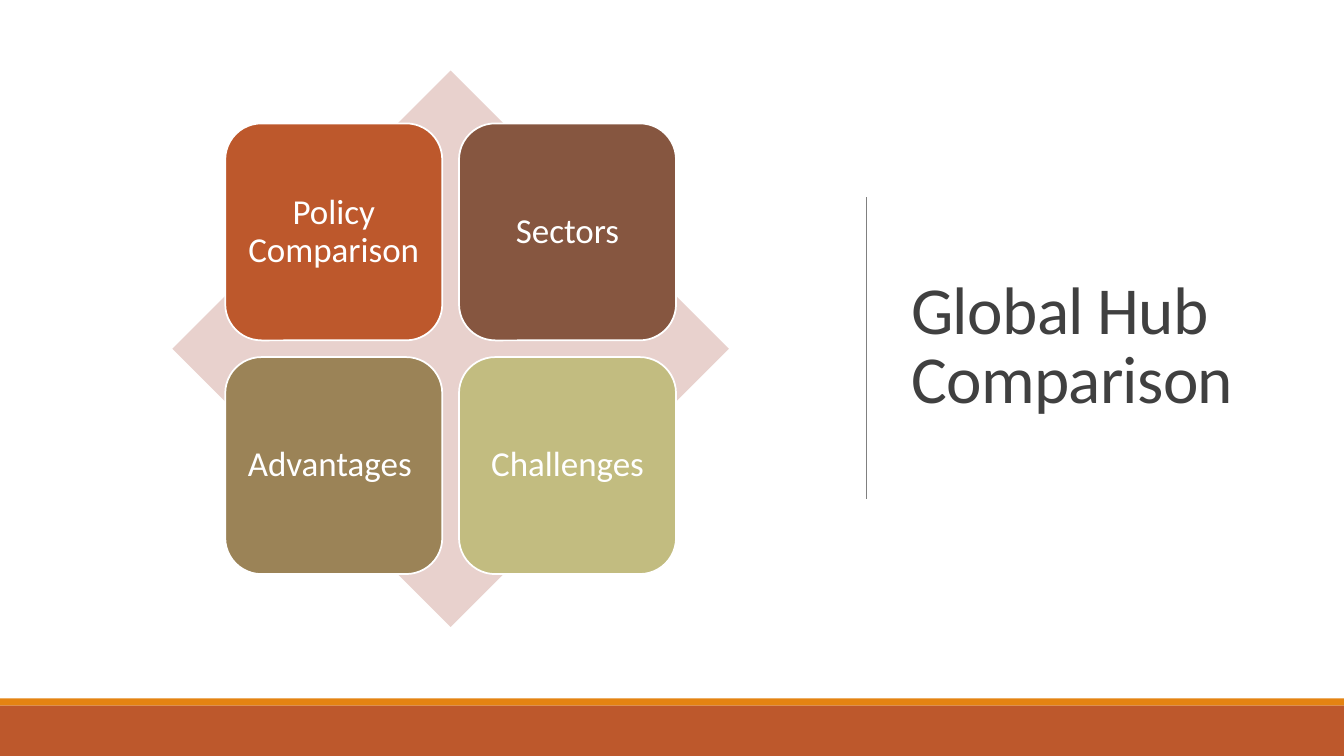
import pptx
import pptx.dml.color
import pptx.enum.shapes
import pptx.enum.text
import pptx.oxml
import pptx.oxml.ns
import pptx.util

RGBColor = pptx.dml.color.RGBColor
Inches = pptx.util.Inches
Pt = pptx.util.Pt
SHAPE = pptx.enum.shapes.MSO_SHAPE
ALIGN = pptx.enum.text.PP_ALIGN

WHITE = RGBColor(0xFF, 0xFF, 0xFF)
CHARCOAL = RGBColor(0x40, 0x40, 0x40)
GRAY = RGBColor(0x80, 0x80, 0x80)
ORANGE = RGBColor(0xE4, 0x83, 0x12)
RUST = RGBColor(0xBD, 0x58, 0x2C)
BROWN = RGBColor(0x86, 0x56, 0x40)
OLIVE = RGBColor(0x9B, 0x83, 0x57)
SAGE = RGBColor(0xC2, 0xBC, 0x80)
BLUSH = RGBColor(0xE8, 0xD1, 0xCD)

FONT = "Calibri"
WIDTH, HEIGHT = 13.33, 7.5
TOPICS = [("Policy Comparison", RUST), ("Sectors", BROWN),
          ("Advantages ", OLIVE), ("Challenges", SAGE)]


def add_block(slide, preset, box, color):
    """Add a filled preset shape without outline or shadow."""
    shape = slide.shapes.add_shape(preset, *map(Inches, box))
    shape.shadow.inherit = False
    shape.fill.solid()
    shape.fill.fore_color.rgb = color
    shape.line.fill.background()
    return shape


def write_text(shape, text, size, color, alignment, line_spacing):
    """Fill a shape with one wrapped, vertically centred paragraph."""
    frame = shape.text_frame
    frame.word_wrap = True
    frame.vertical_anchor = pptx.enum.text.MSO_ANCHOR.MIDDLE
    frame.margin_left = frame.margin_right = Inches(0.1)
    paragraph = frame.paragraphs[0]
    paragraph.alignment = alignment
    paragraph.line_spacing = line_spacing
    run = paragraph.add_run()
    run.text = text
    run.font.name = FONT
    run.font.size = Pt(size)
    run.font.color.rgb = color
    return run


def add_matrix(slide, left, top, side):
    """Place a diamond with a two-by-two grid of topic tiles over it."""
    add_block(slide, SHAPE.DIAMOND, (left, top, side, side), BLUSH)
    tile, pitch = 0.39 * side, 0.42 * side
    margin = (side - pitch - tile) / 2
    for index, (topic, color) in enumerate(TOPICS):
        row, column = divmod(index, 2)
        box = (left + margin + column * pitch, top + margin + row * pitch, tile, tile)
        shape = add_block(slide, SHAPE.ROUNDED_RECTANGLE, box, color)
        shape.line.color.rgb = WHITE
        shape.line.width = Pt(1.25)
        write_text(shape, topic, 25, WHITE, ALIGN.CENTER, 0.9)


def add_title(slide, left, top, width, height):
    """Place the title with a vertical rule on its left."""
    title = slide.shapes.add_textbox(*map(Inches, (left, top, width, height)))
    run = write_text(title, "Global Hub Comparison", 48, CHARCOAL, ALIGN.LEFT, 0.85)
    run.font._element.set("spc", "-50")
    rule_x, middle, half = left - 0.35, top + height / 2, 1.5
    rule = slide.shapes.add_connector(
        pptx.enum.shapes.MSO_CONNECTOR.STRAIGHT,
        Inches(rule_x), Inches(middle - half), Inches(rule_x), Inches(middle + half))
    rule.line.color.rgb = GRAY
    rule.line.width = Pt(0.5)
    properties = rule._element.spPr
    properties.append(pptx.oxml.parse_xml(
        "<a:effectLst %s/>" % pptx.oxml.ns.nsdecls("a")))


def add_footer(slide, left, top, width, height):
    """Place the footer band with a thin stripe along its top."""
    stripe = 0.07
    add_block(slide, SHAPE.RECTANGLE, (left, top, width, stripe), ORANGE)
    add_block(slide, SHAPE.RECTANGLE,
              (left, top + stripe, width, height - stripe), RUST)


def main():
    presentation = pptx.Presentation()
    presentation.slide_width = Inches(WIDTH)
    presentation.slide_height = Inches(HEIGHT)
    slide = presentation.slides.add_slide(presentation.slide_layouts[6])
    add_title(slide, 8.94, 0.69, 3.69, 5.53)
    add_footer(slide, 0, 6.93, WIDTH, HEIGHT - 6.93)
    add_matrix(slide, 1.71, 0.7, 5.52)
    presentation.save("out.pptx")


if __name__ == "__main__":
    main()
